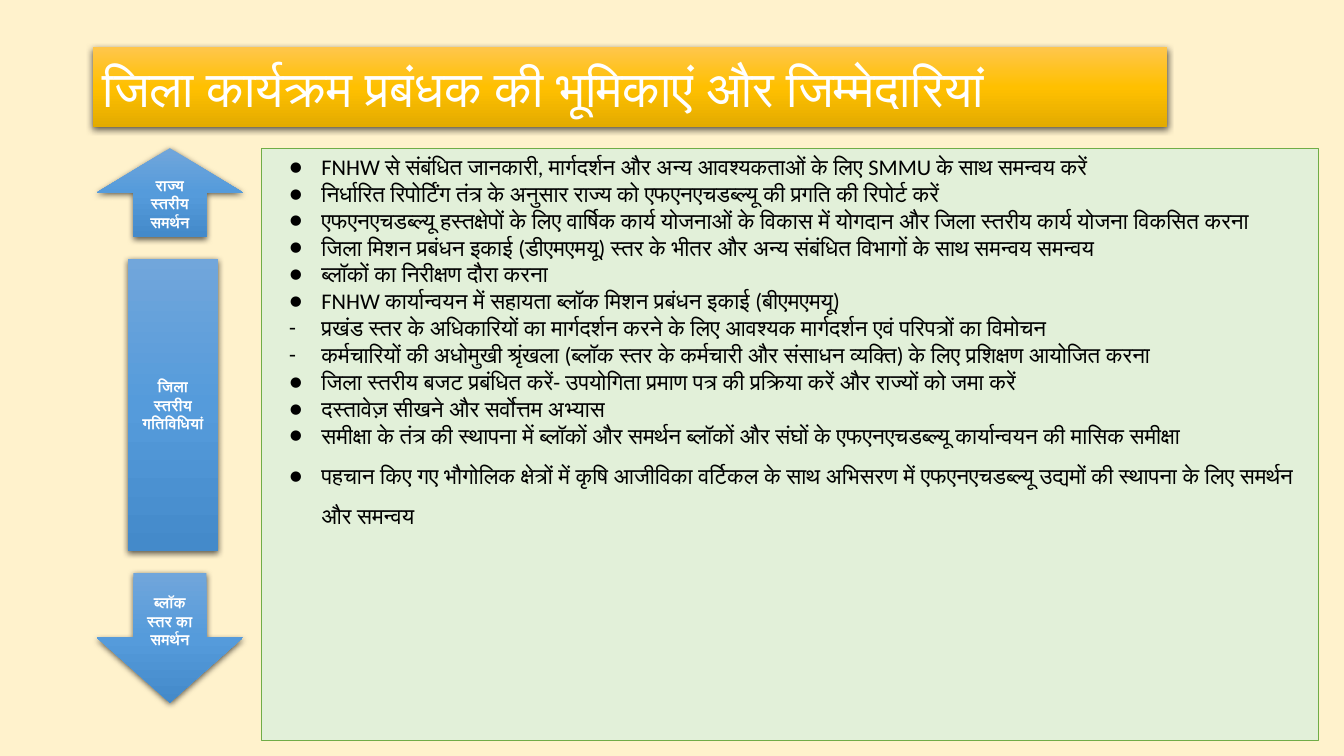
from copy import deepcopy

from lxml import etree
from pptx import Presentation
from pptx.dml.color import RGBColor
from pptx.enum.shapes import MSO_SHAPE
from pptx.enum.text import MSO_ANCHOR, PP_ALIGN
from pptx.oxml.ns import qn
from pptx.util import Pt

RECT, UP, DOWN = MSO_SHAPE.RECTANGLE, MSO_SHAPE.UP_ARROW, MSO_SHAPE.DOWN_ARROW
LEFT, CENTER = PP_ALIGN.LEFT, PP_ALIGN.CENTER
TOP, MIDDLE = MSO_ANCHOR.TOP, MSO_ANCHOR.MIDDLE

# Content
TITLE = "जिला कार्यक्रम प्रबंधक की भूमिकाएं और जिम्मेदारियां"
DUTIES = [
    ("●", "FNHW से संबंधित जानकारी, मार्गदर्शन और अन्य आवश्यकताओं के लिए SMMU के साथ समन्वय करें"),
    ("●", "निर्धारित रिपोर्टिंग तंत्र के अनुसार राज्य को एफएनएचडब्ल्यू की प्रगति की रिपोर्ट करें"),
    ("●", "एफएनएचडब्ल्यू हस्तक्षेपों के लिए वार्षिक कार्य योजनाओं के विकास में योगदान और जिला स्तरीय कार्य योजना विकसित करना"),
    ("●", "जिला मिशन प्रबंधन इकाई (डीएमएमयू) स्तर के भीतर और अन्य संबंधित विभागों के साथ समन्वय समन्वय"),
    ("●", "ब्लॉकों का निरीक्षण दौरा करना"),
    ("●", "FNHW कार्यान्वयन में सहायता ब्लॉक मिशन प्रबंधन इकाई (बीएमएमयू)"),
    ("-", "प्रखंड स्तर के अधिकारियों का मार्गदर्शन करने के लिए आवश्यक मार्गदर्शन एवं परिपत्रों का विमोचन"),
    ("-", "कर्मचारियों की अधोमुखी श्रृंखला (ब्लॉक स्तर के कर्मचारी और संसाधन व्यक्ति) के लिए प्रशिक्षण आयोजित करना"),
    ("●", "जिला स्तरीय बजट प्रबंधित करें- उपयोगिता प्रमाण पत्र की प्रक्रिया करें और राज्यों को जमा करें"),
    ("●", "दस्तावेज़ सीखने और सर्वोत्तम अभ्यास"),
    ("●", "समीक्षा के तंत्र की स्थापना में ब्लॉकों और समर्थन ब्लॉकों और संघों के एफएनएचडब्ल्यू कार्यान्वयन की मासिक समीक्षा"),
    ("●", "पहचान किए गए भौगोलिक क्षेत्रों में कृषि आजीविका वर्टिकल के साथ अभिसरण में एफएनएचडब्ल्यू उद्यमों की स्थापना के लिए समर्थन और समन्वय"),
]
LEVELS = [  # shape, box, label
    (UP, (96, 147, 145, 88), "राज्य स्तरीय समर्थन"),
    (DOWN, (96, 568, 145, 129), "ब्लॉक स्तर का समर्थन"),
    (RECT, (127, 257, 89, 290), "जिला स्तरीय गतिविधियां"),
]
TITLE_BOX = (92, 47, 1066, 79)
DUTIES_BOX = (259, 147, 1049, 588)
INDENT, HANGING = 50, 32

# Formats
COLORS = {"page": "FFF2CC", "panel": "E2F0D9", "edge": "70AD47",
          "text": "000000", "light": "FFFFFF", "shadow": "000000"}
GRADIENTS = {"blue": ("71A6DB", "559BDB", "448ACA"),
             "gold": ("FFC64B", "FFC000", "E3AB00")}
FONTS = {
    "title": {"name": "Calibri", "size": Pt(36), "bold": False},
    "level": {"name": "Calibri", "size": Pt(11), "bold": True},
    "duty": {"name": "Calibri", "size": Pt(16), "bold": False},
}
SHADOW = {"blurRad": Pt(4.5), "dist": Pt(1.5), "dir": 90 * 60000,
          "algn": "ctr", "rotWithShape": 0}
PX = 9144  # 100 px to the inch


def rgb(name):
    return RGBColor.from_string(COLORS[name])


def add_child(parent, tag, **attrs):
    child = etree.SubElement(parent, qn(tag))
    for key, value in attrs.items():
        child.set(key, str(value))
    return child


def add_box(shape, box, anchor):
    sp = slide.shapes.add_shape(shape, *(v * PX for v in box))
    sp.shadow.inherit = False
    tf = sp.text_frame
    tf.word_wrap = True
    tf.vertical_anchor = anchor
    return sp


def write(p, text, style, color, align):
    p.alignment = align
    r = p.add_run()
    r.text = text
    for key, value in FONTS[style].items():
        setattr(r.font, key, value)
    r.font.color.rgb = rgb(color)


def add_glossy_box(shape, box, text, gradient, style, align):
    sp = add_box(shape, box, MIDDLE)
    sp.line.fill.background()
    sp.fill.gradient()
    sp.fill.gradient_angle = 270
    spPr = sp._element.spPr
    stops = spPr.find(".//" + qn("a:gsLst"))
    stops.append(deepcopy(stops[0]))
    for i, (stop, color) in enumerate(zip(sp.fill.gradient_stops, GRADIENTS[gradient])):
        stop.position = i / 2
        stop.color.rgb = RGBColor.from_string(color)
    shadow = add_child(spPr.find(qn("a:effectLst")), "a:outerShdw", **SHADOW)
    tint = add_child(shadow, "a:srgbClr", val=COLORS["shadow"])
    add_child(tint, "a:alpha", val=63000)
    write(sp.text_frame.paragraphs[0], text, style, "light", align)


prs = Presentation()
prs.slide_width, prs.slide_height = 1333 * PX, 750 * PX
slide = prs.slides.add_slide(prs.slide_layouts[6])
slide.background.fill.solid()
slide.background.fill.fore_color.rgb = rgb("page")

# Duties panel
panel = add_box(RECT, DUTIES_BOX, TOP)
panel.fill.solid()
panel.fill.fore_color.rgb = rgb("panel")
panel.line.color.rgb = rgb("edge")
panel.line.width = Pt(0.5)
tf = panel.text_frame
for i, (bullet, duty) in enumerate(DUTIES):
    p = tf.add_paragraph() if i else tf.paragraphs[0]
    pPr = p._p.get_or_add_pPr()
    pPr.set("marL", str(INDENT * PX))
    pPr.set("indent", str(-HANGING * PX))
    add_child(pPr, "a:buFont", typeface="Calibri")
    add_child(pPr, "a:buChar", char=bullet)
    write(p, duty, "duty", "text", LEFT)
p.line_spacing = 1.5  # the last duty is set wider

# Levels of support, then the title bar
for shape, box, label in LEVELS:
    add_glossy_box(shape, box, label, "blue", "level", CENTER)
add_glossy_box(RECT, TITLE_BOX, TITLE, "gold", "title", LEFT)

prs.save("out.pptx")
